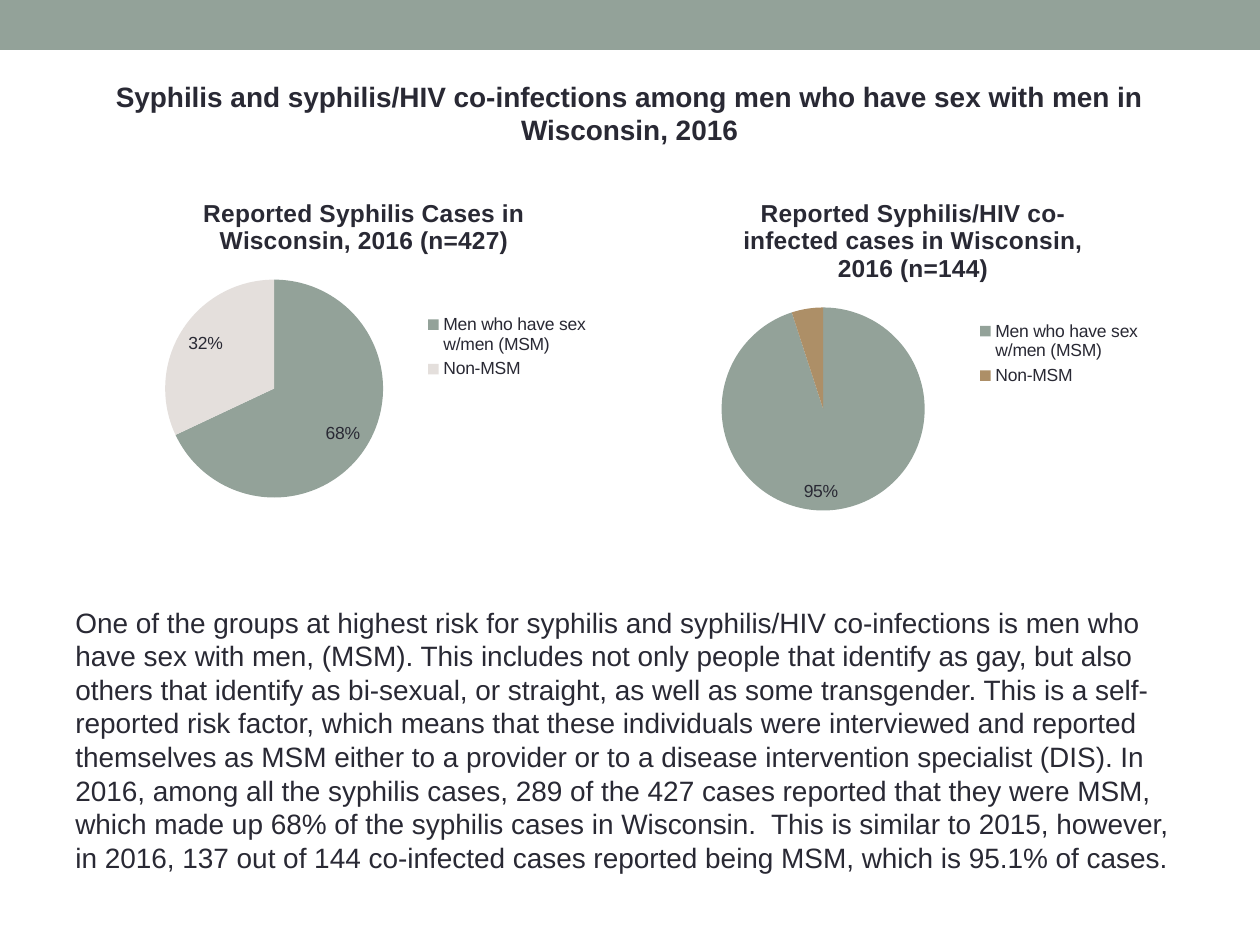
from lxml import etree
from pptx import Presentation
from pptx.chart.data import CategoryChartData
from pptx.dml.color import RGBColor
from pptx.enum.chart import XL_CHART_TYPE, XL_LABEL_POSITION, XL_LEGEND_POSITION
from pptx.enum.shapes import MSO_SHAPE
from pptx.enum.text import PP_ALIGN
from pptx.oxml.ns import qn
from pptx.util import Emu, Pt

PX = 914400 / 126
FONT = "Arial"
COLORS = {"sage": "93A299", "stone": "E4DFDC", "tan": "AD8F67", "ink": "292934"}
GROUPS = ["Men who have sex w/men (MSM)", "Non-MSM"]

HEADLINE = ("Syphilis and syphilis/HIV co-infections among men who have sex "
            "with men in Wisconsin, 2016")
SUMMARY = (
    "One of the groups at highest risk for syphilis and syphilis/HIV co-infections is men "
    "who have sex with men, (MSM). This includes not only people that identify as gay, but "
    "also others that identify as bi-sexual, or straight, as well as some transgender. This "
    "is a self-reported risk factor, which means that these individuals were interviewed and "
    "reported themselves as MSM either to a provider or to a disease intervention specialist "
    "(DIS). In 2016, among all the syphilis cases, 289 of the 427 cases reported that they "
    "were MSM, which made up 68% of the syphilis cases in Wisconsin.  This is similar to "
    "2015, however, in 2016, 137 out of 144 co-infected cases reported being MSM, which is "
    "95.1% of cases."
)


def emu(box):
    return [Emu(round(length * PX)) for length in box]


def color(name):
    return RGBColor.from_string(COLORS[name])


def set_font(font, size, bold=False):
    font.name = FONT
    font.size = Pt(size)
    font.bold = bold
    font.color.rgb = color("ink")


def add_band(slide, box):
    band = slide.shapes.add_shape(MSO_SHAPE.RECTANGLE, *emu(box))
    band.shadow.inherit = False
    band.fill.solid()
    band.fill.fore_color.rgb = color("sage")
    band.line.fill.background()


def add_text(slide, box, text, bold=False, align=PP_ALIGN.LEFT):
    frame = slide.shapes.add_textbox(*emu(box)).text_frame
    frame.word_wrap = True
    paragraph = frame.paragraphs[0]
    paragraph.text = text
    paragraph.alignment = align
    set_font(paragraph.font, 16, bold)


def add_pie(slide, box, title, shares, slice_colors, hidden_labels=()):
    data = CategoryChartData()
    data.categories = GROUPS
    data.add_series("Series 1", shares)
    chart = slide.shapes.add_chart(XL_CHART_TYPE.PIE, *emu(box), data).chart
    set_font(chart.font, 10)

    # Title and legend
    heading = chart.chart_title.text_frame.paragraphs[0]
    heading.text = title
    set_font(heading.font, 14, bold=True)
    chart.chart_title.include_in_layout = False
    chart.has_legend = True
    chart.legend.position = XL_LEGEND_POSITION.RIGHT
    chart.legend.include_in_layout = False

    # Slices
    chart.plots[0].vary_by_categories = True
    series = chart.plots[0].series[0]
    for index, name in enumerate(slice_colors):
        fill = series.points[index].format.fill
        fill.solid()
        fill.fore_color.rgb = color(name)

    # Percent labels
    labels = series.data_labels
    labels.show_percentage = True
    labels.show_value = False
    labels.number_format = "0%"
    labels.number_format_is_linked = False
    labels.position = XL_LABEL_POSITION.INSIDE_END
    for position, index in enumerate(hidden_labels):
        label = etree.Element(qn("c:dLbl"))
        etree.SubElement(label, qn("c:idx")).set("val", str(index))
        etree.SubElement(label, qn("c:delete")).set("val", "1")
        labels._element.insert(position, label)


def main():
    prs = Presentation()
    prs.slide_width, prs.slide_height = emu((1260, 945))
    slide = prs.slides.add_slide(prs.slide_layouts[6])

    add_band(slide, (0, 0, 1260, 50))
    add_text(slide, (63, 599, 1134, 294), SUMMARY)
    add_pie(slide, (126, 179, 476, 336),
            "Reported Syphilis Cases in Wisconsin, 2016 (n=427)",
            (68, 32), ("sage", "stone"))
    add_pie(slide, (672, 179, 482, 349),
            "Reported Syphilis/HIV co-infected cases in Wisconsin, 2016 (n=144)",
            (95, 5), ("sage", "tan"), hidden_labels=[1])
    add_text(slide, (73, 73, 1113, 81), HEADLINE, bold=True, align=PP_ALIGN.CENTER)

    prs.save("out.pptx")


if __name__ == "__main__":
    main()
